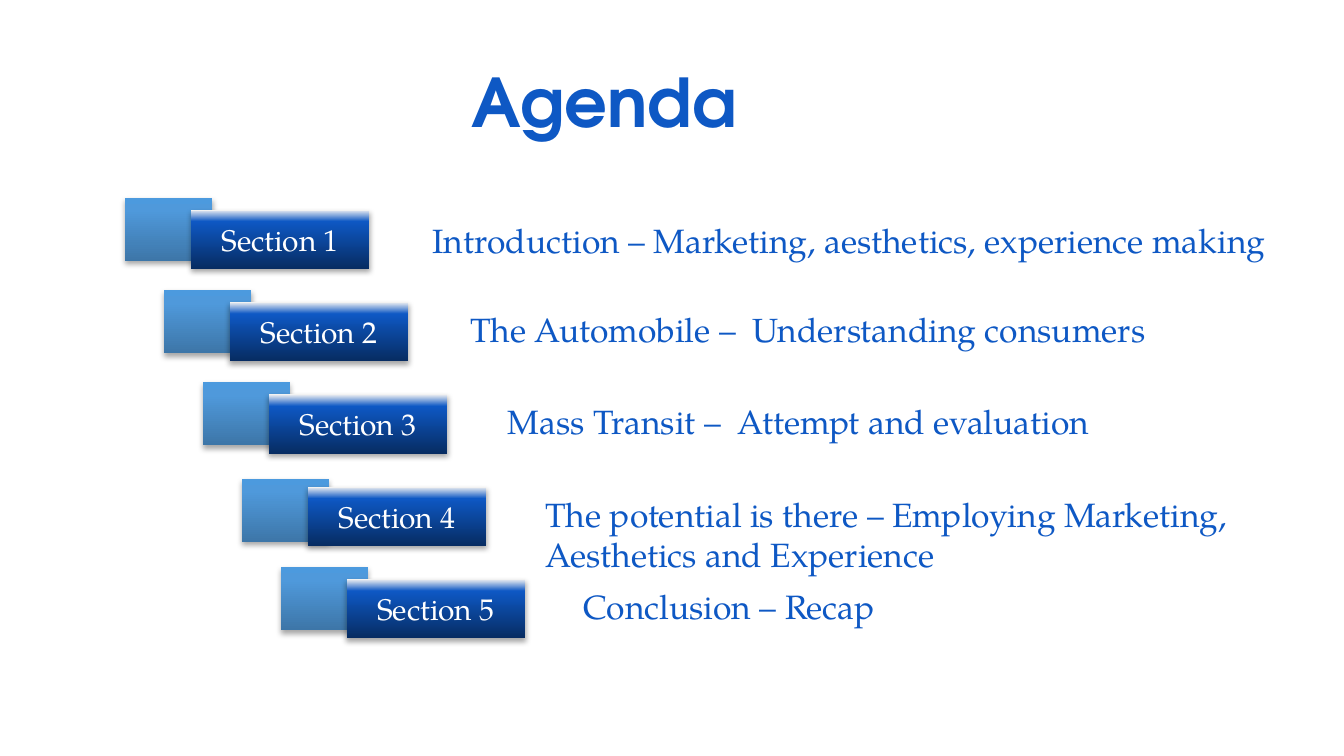
"""Build the agenda slide: five stepped section tags with their topics."""
from lxml import etree
from pptx import Presentation
from pptx.dml.color import RGBColor
from pptx.enum.shapes import MSO_SHAPE
from pptx.enum.text import MSO_ANCHOR, PP_ALIGN
from pptx.oxml.ns import qn
from pptx.util import Inches, Pt

RECT = MSO_SHAPE.RECTANGLE
TOP, MIDDLE, BOTTOM = MSO_ANCHOR.TOP, MSO_ANCHOR.MIDDLE, MSO_ANCHOR.BOTTOM
LEFT, CENTER = PP_ALIGN.LEFT, PP_ALIGN.CENTER

TITLE = "Agenda"
ROWS = [
    {"topic": "Introduction – Marketing, aesthetics, experience making", "dip": 0.03},
    {"topic": "The Automobile –  Understanding consumers"},
    {"topic": "Mass Transit –  Attempt and evaluation"},
    {"topic": "The potential is there – Employing Marketing, Aesthetics and Experience",
     "drop": 0.03},
    {"topic": "Conclusion – Recap"},
]
THEME = {
    "title": ("TeX Gyre Adventor", 36, "0E58C4", True),
    "topic": ("TeX Gyre Pagella", 18, "0E58C4", False),
    "tag": ("TeX Gyre Pagella", 16, "FFFFFF", False),
    "square": [(0, "3D76A8"), (80, "4F99DB"), (100, "4C9ADE")],
    "bar": [(0, "072C62"), (80, "0E58C4"), (100, "F2F2F2")],
    "shade": ("000000", 35, 3.1, 1.8, 90),
}
WIDE = 10
HIGH = WIDE * 9 / 16
STEP_X, STEP_Y, TEXT_X = 0.29, 11 / 16, 0.28


def tint(parent, tag, color):
    """Add a child element that holds an RGB colour and return both."""
    item = etree.SubElement(parent, qn(tag))
    return item, etree.SubElement(item, qn("a:srgbClr"), val=color)


def write(shape, text, style, align, anchor, indent=0):
    """Put one styled paragraph in a shape."""
    name, size, color, bold = THEME[style]
    frame = shape.text_frame
    frame.word_wrap = True
    frame.vertical_anchor = anchor
    para = frame.paragraphs[0]
    para.text = text
    para.alignment = align
    if indent:
        para._p.get_or_add_pPr().set("marL", str(Inches(indent)))
    font = para.font
    font.name, font.size, font.bold = name, Pt(size), bold
    font.color.rgb = RGBColor.from_string(color)


def block(slide, box, stops):
    """Draw a rectangle with an upward gradient and a soft shadow."""
    shape = slide.shapes.add_shape(RECT, *map(Inches, box))
    shape.line.fill.background()
    shape.fill.gradient()
    shape.fill.gradient_angle = 90
    props = shape._element.spPr
    ramp = props.find(".//" + qn("a:gsLst"))
    for old in list(ramp):
        ramp.remove(old)
    for place, color in THEME[stops]:
        tint(ramp, "a:gs", color)[0].set("pos", str(place * 1000))
    shape.shadow.inherit = False
    color, alpha, blur, dist, angle = THEME["shade"]
    shade, ink = tint(props.find(qn("a:effectLst")), "a:outerShdw", color)
    for key, value in (("blurRad", Pt(blur)), ("dist", Pt(dist)),
                       ("dir", angle * 60000), ("rotWithShape", 0)):
        shade.set(key, str(value))
    etree.SubElement(ink, qn("a:alpha"), val=str(alpha * 1000))
    return shape


def label(slide, box, *style):
    """Add a text box."""
    write(slide.shapes.add_textbox(*map(Inches, box)), *style)


def main():
    """Lay out the slide and save it."""
    deck = Presentation()
    deck.slide_width, deck.slide_height = Inches(WIDE), Inches(HIGH)
    slide = deck.slides.add_slide(deck.slide_layouts[6])
    label(slide, (0.33, 0.51, 8.33, 0.59), TITLE, "title", CENTER, BOTTOM)
    for i, row in enumerate(ROWS):
        x, y = i * STEP_X, 1.56 + i * STEP_Y
        block(slide, (0.93 + x, y - 0.09 + row.get("drop", 0), 0.65, 0.47), "square")
        left = 3.06 + i * TEXT_X
        label(slide, (left, y + row.get("dip", 0), WIDE - left, 0.69),
              row["topic"], "topic", LEFT, TOP, 0.06)
        bar = block(slide, (1.42 + x, y, 1.33, 0.44), "bar")
        write(bar, f"Section {i + 1}", "tag", CENTER, MIDDLE)
    deck.save("out.pptx")


if __name__ == "__main__":
    main()
